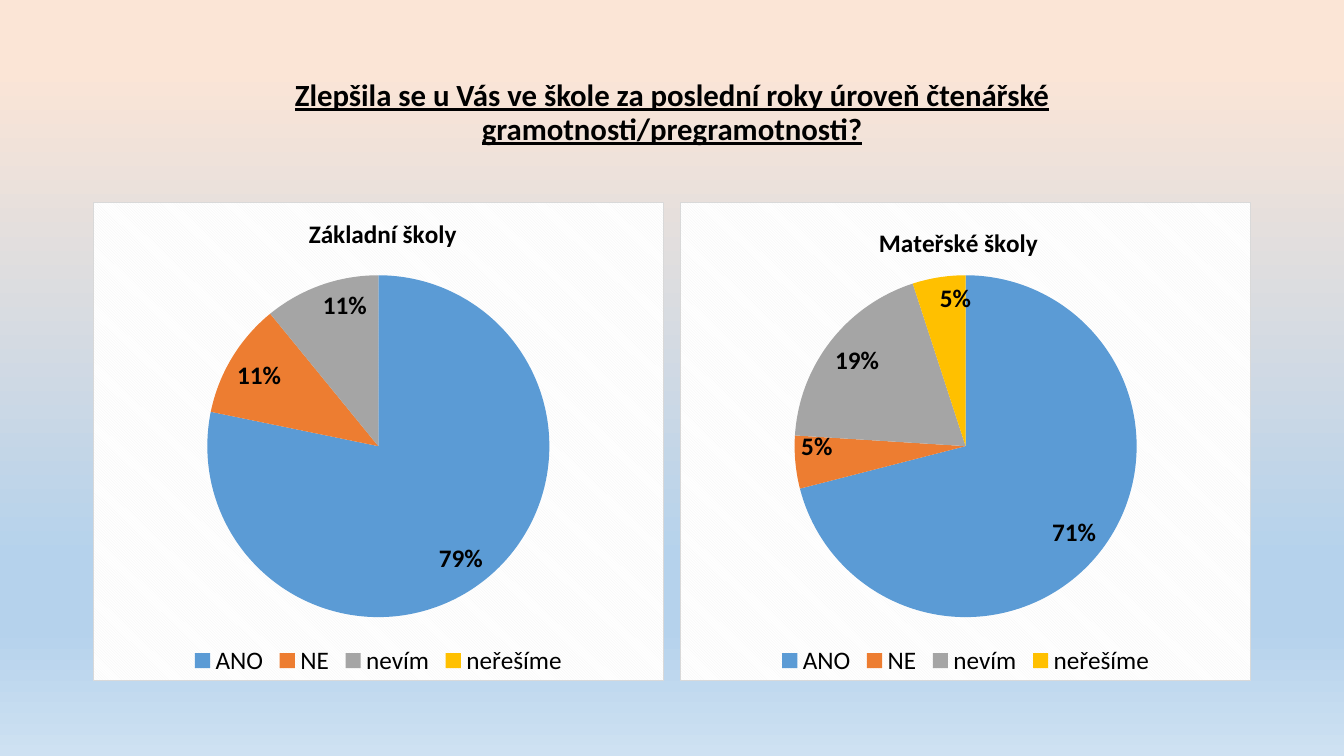
from copy import deepcopy
from lxml.etree import SubElement
from pptx import Presentation
from pptx.chart.data import CategoryChartData as Data
from pptx.dml.color import RGBColor as RGB
from pptx.enum.chart import XL_CHART_TYPE as Kind, XL_LABEL_POSITION as Spot, XL_LEGEND_POSITION as Side
from pptx.enum.text import MSO_ANCHOR as Anchor, PP_ALIGN as Align
from pptx.oxml import parse_xml
from pptx.oxml.ns import nsdecls, qn
from pptx.util import Inches

theme = {
    "font": "Calibri", "ink": "000000", "head": 22, "body": 18,
    "slices": ["5B9BD5", "ED7D31", "A5A5A5", "FFC000"],
    "sky": [(9, "FBE5D6"), (74, "B5D2EC"), (83, "B5D2EC"), (100, "CEE1F2")],
    "hatch": ("F2F2F2", "FFFFFF"), "edge": "D9D9D9",
}


def style(font, size, **more):
    """Apply the theme face and ink, a point size and further font values."""
    look = {"name": theme["font"], "size": Inches(size / 72), **more}
    for key, val in look.items():
        setattr(font, key, val)
    font.color.rgb = RGB.from_string(theme["ink"])


def place(host, index, **box):
    """Give a chart part a manual layout, in shares of the chart."""
    for old in host.findall(qn("c:layout")):
        host.remove(old)
    lay = parse_xml(f"<c:layout {nsdecls('c')}/>")
    spot = SubElement(lay, qn("c:manualLayout"))
    if "w" in box:
        SubElement(spot, qn("c:layoutTarget")).set("val", "inner")
    for key in ("x", "y"):
        SubElement(spot, qn(f"c:{key}Mode")).set("val", "edge")
    for key, val in box.items():
        SubElement(spot, qn(f"c:{key}")).set("val", str(val))
    host.insert(index, lay)


deck = Presentation()
deck.slide_width, deck.slide_height = Inches(13.33), Inches(7.5)
slide = deck.slides.add_slide(deck.slide_layouts[6])

# Background: peach at the top, blue at the bottom
back = slide.background.fill
back.gradient()
back.gradient_angle = 270
stops = slide.background._cSld.find(".//" + qn("a:gsLst"))
for extra in theme["sky"][2:]:
    stops.append(deepcopy(stops[0]))
for stop, (pos, tint) in zip(back.gradient_stops, theme["sky"]):
    stop.position = pos / 100
    stop.color.rgb = RGB.from_string(tint)

# Grid: two equal columns between the side margins
edge, gap = 0.92, 0.16
full = 13.33 - 2 * edge
wide = (full - gap) / 2
top, high = 2, 4.76

# Heading
frame = slide.shapes.add_textbox(*map(Inches, (edge, 0.4, full, 1.45))).text_frame
frame.word_wrap = True
frame.vertical_anchor = Anchor.MIDDLE
para = frame.paragraphs[0]
para.alignment, para.line_spacing = Align.CENTER, 0.9
run = para.add_run()
run.text = "Zlepšila se u Vás ve škole za poslední roky úroveň čtenářské gramotnosti/pregramotnosti?"
style(run.font, theme["head"], bold=True, underline=True)

# Pies: title, shares in percent, title corner
names = ["ANO", "NE", "nevím", "neřešíme"]
pies = [
    ("Základní školy", (79, 11, 11, 0), (0.37, 0.02)),
    ("Mateřské školy", (71, 5, 19, 5), (0.34, 0.04)),
]
fore, base = theme["hatch"]
for col, (title, vals, (left, down)) in enumerate(pies):
    data = Data()
    data.categories = names
    data.add_series("Series 1", vals)
    area = map(Inches, (edge + col * (wide + gap), top, wide, high))
    chart = slide.shapes.add_chart(Kind.PIE, *area, data).chart
    style(chart.font, theme["body"])

    chart.has_title = True
    head = chart.chart_title
    head.text_frame.text = title
    style(head.text_frame.paragraphs[0].runs[0].font, theme["body"], bold=True)
    head.include_in_layout = False
    place(head._element, 1, x=left, y=down)

    chart.has_legend = True
    chart.legend.position = Side.BOTTOM
    chart.legend.include_in_layout = False
    style(chart.legend.font, theme["body"])

    plot = chart.plots[0]
    plot.vary_by_categories = True
    for num, tint in enumerate(theme["slices"]):
        fill = plot.series[0].points[num].format.fill
        fill.solid()
        fill.fore_color.rgb = RGB.from_string(tint)

    # The format hides the label of an empty slice
    plot.has_data_labels = True
    marks = plot.data_labels
    look = {"show_value": True, "show_percentage": False, "position": Spot.INSIDE_END,
            "number_format": '0"%";;', "number_format_is_linked": False}
    for key, val in look.items():
        setattr(marks, key, val)
    style(marks.font, theme["body"], bold=True)

    space = chart._chartSpace
    body = space.find(qn("c:chart"))
    place(body.find(qn("c:plotArea")), 0, x=0.2, y=0.15, w=0.6, h=0.72)
    body.addnext(parse_xml(
        f'<c:spPr {nsdecls("c", "a")}><a:pattFill prst="ltDnDiag">'
        f'<a:fgClr><a:srgbClr val="{fore}"/></a:fgClr>'
        f'<a:bgClr><a:srgbClr val="{base}"/></a:bgClr></a:pattFill>'
        f'<a:ln w="9525"><a:solidFill><a:srgbClr val="{theme["edge"]}"/></a:solidFill></a:ln></c:spPr>'))

deck.save("out.pptx")
